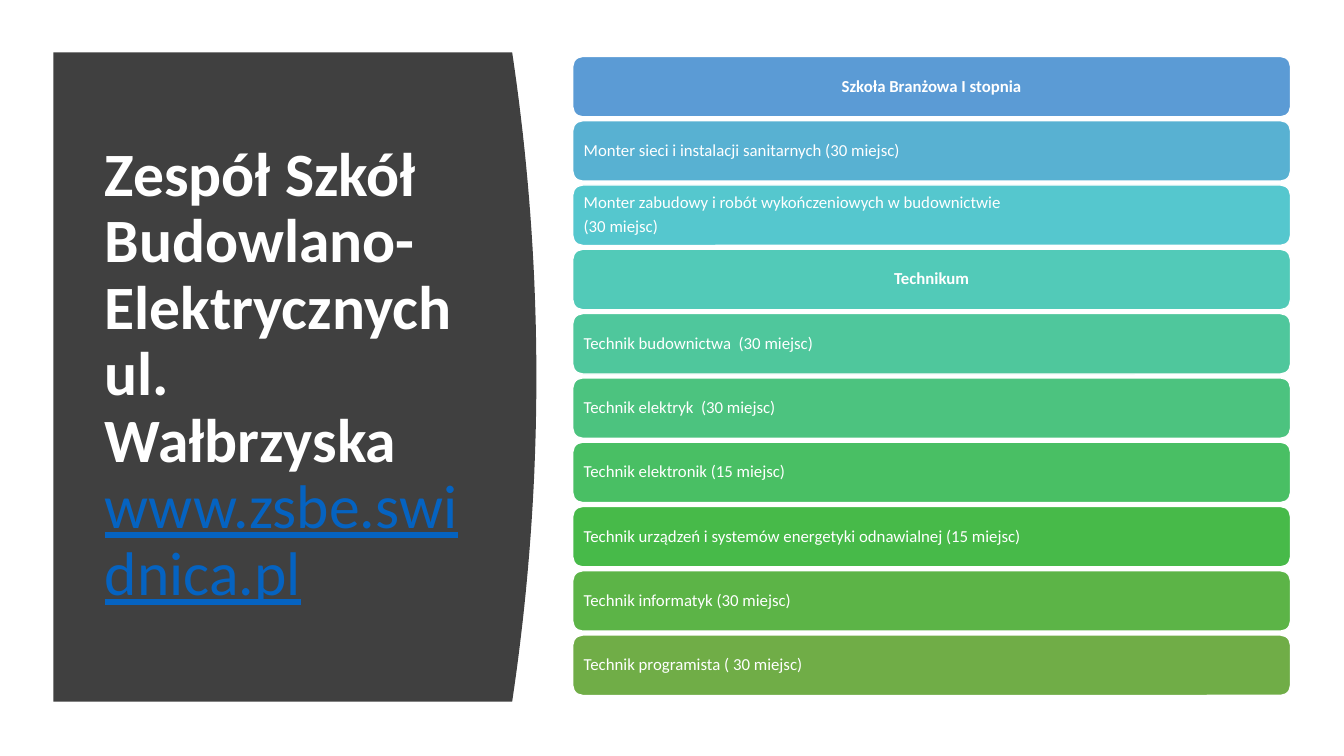
from pptx import Presentation
from pptx.dml.color import RGBColor
from pptx.enum.shapes import MSO_SHAPE
from pptx.enum.text import MSO_ANCHOR, PP_ALIGN
from pptx.util import Inches, Pt

ROUNDED = MSO_SHAPE.ROUNDED_RECTANGLE
MIDDLE = MSO_ANCHOR.MIDDLE
LEFT, CENTER = PP_ALIGN.LEFT, PP_ALIGN.CENTER

FONT = "Calibri"
WHITE = RGBColor(0xFF, 0xFF, 0xFF)
DARK = RGBColor(0x40, 0x40, 0x40)
LINK_BLUE = RGBColor(0x05, 0x63, 0xC1)

SCHOOL = ["Zespół Szkół Budowlano-Elektrycznych", "ul. Wałbrzyska"]
WEB_ADDRESS = "www.zsbe.swidnica.pl"

# text, fill, is a heading
BARS = [
    ("Szkoła Branżowa I stopnia", RGBColor(0x5B, 0x9B, 0xD5), True),
    ("Monter sieci i instalacji sanitarnych (30 miejsc)", RGBColor(0x58, 0xB1, 0xD2), False),
    ("Monter zabudowy i robót wykończeniowych w budownictwie\n(30 miejsc)",
     RGBColor(0x55, 0xC7, 0xCE), False),
    ("Technikum", RGBColor(0x52, 0xCA, 0xB8), True),
    ("Technik budownictwa  (30 miejsc)", RGBColor(0x4F, 0xC7, 0x9C), False),
    ("Technik elektryk  (30 miejsc)", RGBColor(0x4C, 0xC3, 0x7F), False),
    ("Technik elektronik (15 miejsc)", RGBColor(0x49, 0xBF, 0x64), False),
    ("Technik urządzeń i systemów energetyki odnawialnej (15 miejsc)",
     RGBColor(0x47, 0xBA, 0x49), False),
    ("Technik informatyk (30 miejsc)", RGBColor(0x5C, 0xB4, 0x47), False),
    ("Technik programista ( 30 miejsc)", RGBColor(0x70, 0xAD, 0x47), False),
]

PANEL_LEFT, PANEL_TOP, PANEL_BOTTOM = 0.53, 0.52, 6.96
PANEL_CORNER, PANEL_BULGE, CURVE_STEPS = 5.08, 0.24, 40
BAR_LEFT, BAR_WIDTH, BAR_HEIGHT = 5.68, 7.12, 0.6
FIRST_BAR_TOP, LAST_BAR_TOP = 0.56, 6.3
BAR_INSET = 0.08


def add_panel(slide):
    """Draw the dark panel whose right side bulges as a parabola."""
    curve = []
    for step in range(CURVE_STEPS + 1):
        share = step / CURVE_STEPS
        x = PANEL_CORNER + PANEL_BULGE * 4 * share * (1 - share)
        y = PANEL_TOP + (PANEL_BOTTOM - PANEL_TOP) * share
        curve.append((Inches(x), Inches(y)))
    builder = slide.shapes.build_freeform(Inches(PANEL_LEFT), Inches(PANEL_TOP))
    builder.add_line_segments(curve + [(Inches(PANEL_LEFT), Inches(PANEL_BOTTOM))], close=True)
    panel = builder.convert_to_shape()
    panel.shadow.inherit = False
    panel.fill.solid()
    panel.fill.fore_color.rgb = DARK
    panel.line.fill.background()


def format_run(run, size, bold, color=WHITE):
    run.font.name = FONT
    run.font.size = Pt(size)
    run.font.bold = bold
    run.font.color.rgb = color


def add_title(slide):
    box = slide.shapes.add_textbox(Inches(0.94), Inches(1.11), Inches(3.74), Inches(5.24))
    frame = box.text_frame
    frame.word_wrap = True
    frame.vertical_anchor = MIDDLE
    paragraph = frame.paragraphs[0]
    paragraph.text = "\v".join(SCHOOL + [WEB_ADDRESS])
    paragraph.line_spacing = 0.9
    *school_runs, address_run = paragraph.runs
    for run in school_runs:
        format_run(run, 44, True)
    format_run(address_run, 44, False, LINK_BLUE)
    address_run.font.underline = True


def add_bar(slide, top, text, color, heading):
    bar = slide.shapes.add_shape(
        ROUNDED, Inches(BAR_LEFT), Inches(top), Inches(BAR_WIDTH), Inches(BAR_HEIGHT))
    bar.shadow.inherit = False
    bar.fill.solid()
    bar.fill.fore_color.rgb = color
    bar.line.color.rgb = WHITE
    bar.line.width = Pt(1)
    frame = bar.text_frame
    frame.word_wrap = True
    frame.vertical_anchor = MIDDLE
    frame.margin_left = frame.margin_right = Inches(BAR_INSET)
    frame.margin_top = frame.margin_bottom = Inches(BAR_INSET)
    frame.text = text
    for paragraph in frame.paragraphs:
        paragraph.alignment = CENTER if heading else LEFT
        paragraph.line_spacing = 0.9
        paragraph.space_after = Pt(4)
        format_run(paragraph.runs[0], 12, heading)


def main():
    presentation = Presentation()
    presentation.slide_width = Inches(13.33)
    presentation.slide_height = Inches(7.5)
    slide = presentation.slides.add_slide(presentation.slide_layouts[6])
    add_panel(slide)
    add_title(slide)
    pitch = (LAST_BAR_TOP - FIRST_BAR_TOP) / (len(BARS) - 1)
    for index, (text, color, heading) in enumerate(BARS):
        add_bar(slide, FIRST_BAR_TOP + index * pitch, text, color, heading)
    presentation.save("out.pptx")


if __name__ == "__main__":
    main()
